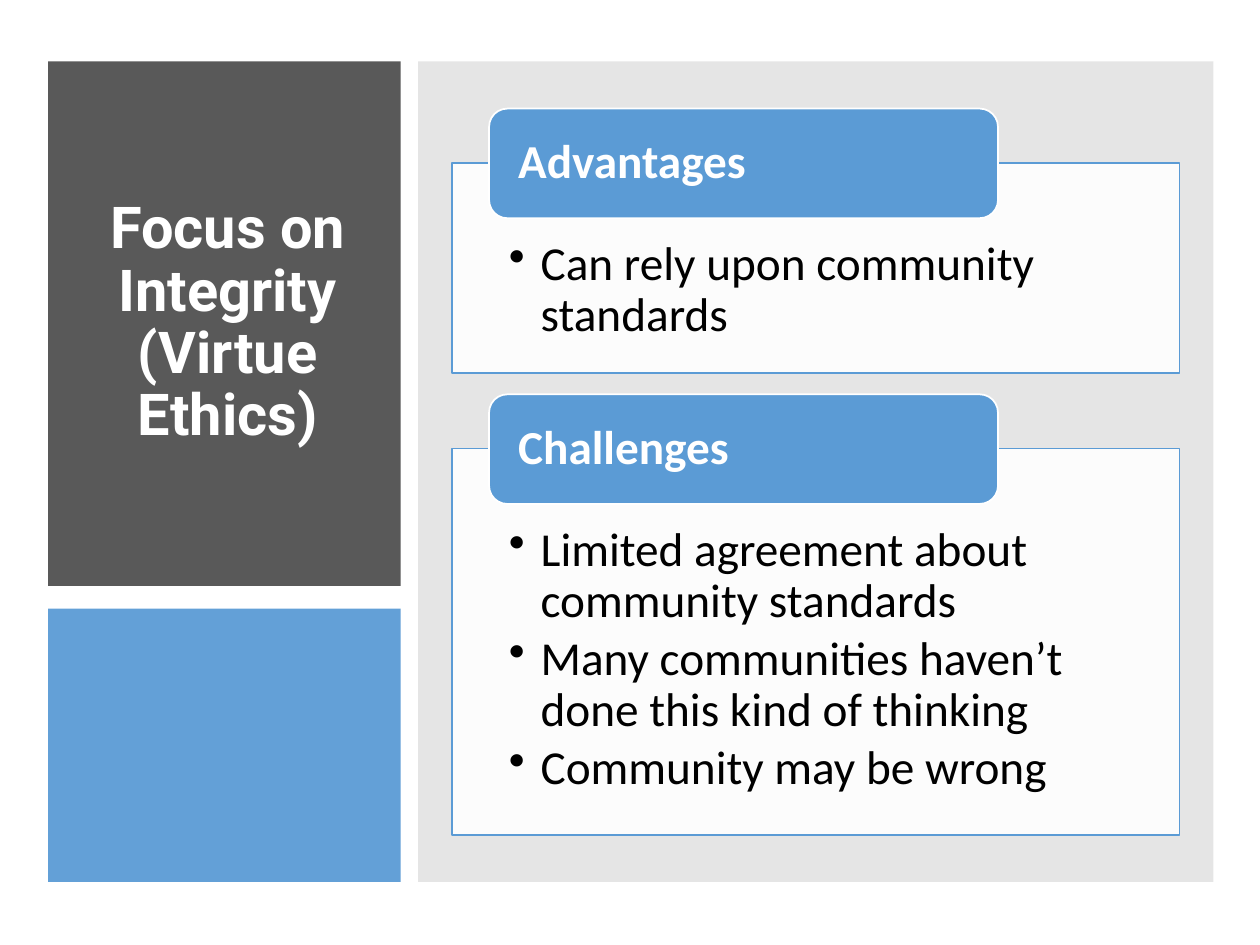
from pptx import Presentation
from pptx.dml.color import RGBColor
from pptx.enum.shapes import MSO_SHAPE
from pptx.enum.text import MSO_ANCHOR, MSO_AUTO_SIZE, PP_ALIGN
from pptx.oxml.ns import qn
from pptx.oxml.xmlchemy import OxmlElement
from pptx.util import Cm, Pt

COLORS = {
    "white": "FFFFFF",
    "black": "000000",
    "dark": "595959",
    "gray": "808080",
    "blue": "5B9BD5",
}
SECTIONS = [
    ("Advantages", 4.24, ["Can rely upon community standards"]),
    ("Challenges", 7.8, [
        "Limited agreement about community standards",
        "Many communities haven’t done this kind of thinking",
        "Community may be wrong",
    ]),
]
FIRST_BOX_TOP = 3.28
BOX_GAP = 1.52


class SlideBuilder:
    body_font = "Calibri"
    title_font = "Roboto"
    body_size = 27
    title_size = 33

    def __init__(self, slide):
        self.slide = slide

    def panel(self, left, top, width, height, fill, opacity=100, line=None,
              kind=MSO_SHAPE.RECTANGLE):
        shape = self.slide.shapes.add_shape(
            kind, Cm(left), Cm(top), Cm(width), Cm(height))
        shape.shadow.inherit = False
        shape.fill.solid()
        shape.fill.fore_color.rgb = RGBColor.from_string(COLORS[fill])
        if opacity < 100:
            alpha = OxmlElement("a:alpha")
            alpha.set("val", str(opacity * 1000))
            shape.element.spPr.find(".//" + qn("a:srgbClr")).append(alpha)
        if line:
            shape.line.color.rgb = RGBColor.from_string(COLORS[line])
            shape.line.width = Pt(1)
        else:
            shape.line.fill.background()
        return shape

    def frame(self, shape, anchor, insets):
        """Set wrapping, anchor and insets (left, top, right, bottom)."""
        frame = shape.text_frame
        frame.word_wrap = True
        frame.auto_size = MSO_AUTO_SIZE.NONE
        frame.vertical_anchor = anchor
        (frame.margin_left, frame.margin_top,
         frame.margin_right, frame.margin_bottom) = map(Cm, insets)
        return frame

    def add_text(self, paragraph, text, color, size=body_size, font=body_font,
                 bold=False, align=PP_ALIGN.LEFT):
        paragraph.alignment = align
        paragraph.line_spacing = 0.9
        run = paragraph.add_run()
        run.text = text
        run.font.name = font
        run.font.size = Pt(size)
        run.font.bold = bold
        run.font.color.rgb = RGBColor.from_string(COLORS[color])

    def title(self, text, backdrop):
        """Place the title directly in front of its backdrop."""
        title = self.slide.shapes.title
        title.left, title.top = Cm(1.63), Cm(2.03)
        title.width, title.height = Cm(5.92), Cm(8.99)
        backdrop.element.addnext(title.element)
        frame = self.frame(title, MSO_ANCHOR.MIDDLE, (0.25, 0.13, 0.25, 0.13))
        self.add_text(frame.paragraphs[0], text, "white", self.title_size,
                      self.title_font, True, PP_ALIGN.CENTER)

    def bullet(self, paragraph, text):
        properties = paragraph._p.get_or_add_pPr()
        properties.set("marL", str(Cm(0.64)))
        properties.set("indent", str(-Cm(0.64)))
        mark = OxmlElement("a:buChar")
        mark.set("char", "•")
        properties.append(mark)
        paragraph.space_after = Pt(4)
        self.add_text(paragraph, text, "black")

    def section(self, top, heading, height, bullets):
        box = self.panel(9.12, top, 14.66, height, "white", 90, "blue")
        frame = self.frame(box, MSO_ANCHOR.TOP, (1.14, 1.55, 1.14, 0.53))
        for index, text in enumerate(bullets):
            paragraph = frame.add_paragraph() if index else frame.paragraphs[0]
            self.bullet(paragraph, text)
        tab = self.panel(9.86, top - 1.09, 10.26, 2.21, "blue", line="white",
                         kind=MSO_SHAPE.ROUNDED_RECTANGLE)
        frame = self.frame(tab, MSO_ANCHOR.MIDDLE, (0.48, 0, 0.48, 0))
        self.add_text(frame.paragraphs[0], heading, "white", bold=True)


def main():
    presentation = Presentation()
    presentation.slide_width, presentation.slide_height = Cm(25.4), Cm(19.05)
    title_only = presentation.slide_layouts[5]
    builder = SlideBuilder(presentation.slides.add_slide(title_only))

    backdrop = builder.panel(0.97, 1.24, 7.11, 10.57, "dark")
    builder.title("Focus on Integrity (Virtue Ethics)", backdrop)
    builder.panel(0.97, 12.27, 7.11, 5.51, "blue", 95)
    builder.panel(8.43, 1.24, 16.03, 16.54, "gray", 20)

    top = FIRST_BOX_TOP
    for heading, height, bullets in SECTIONS:
        builder.section(top, heading, height, bullets)
        top += height + BOX_GAP

    presentation.save("out.pptx")


if __name__ == "__main__":
    main()
